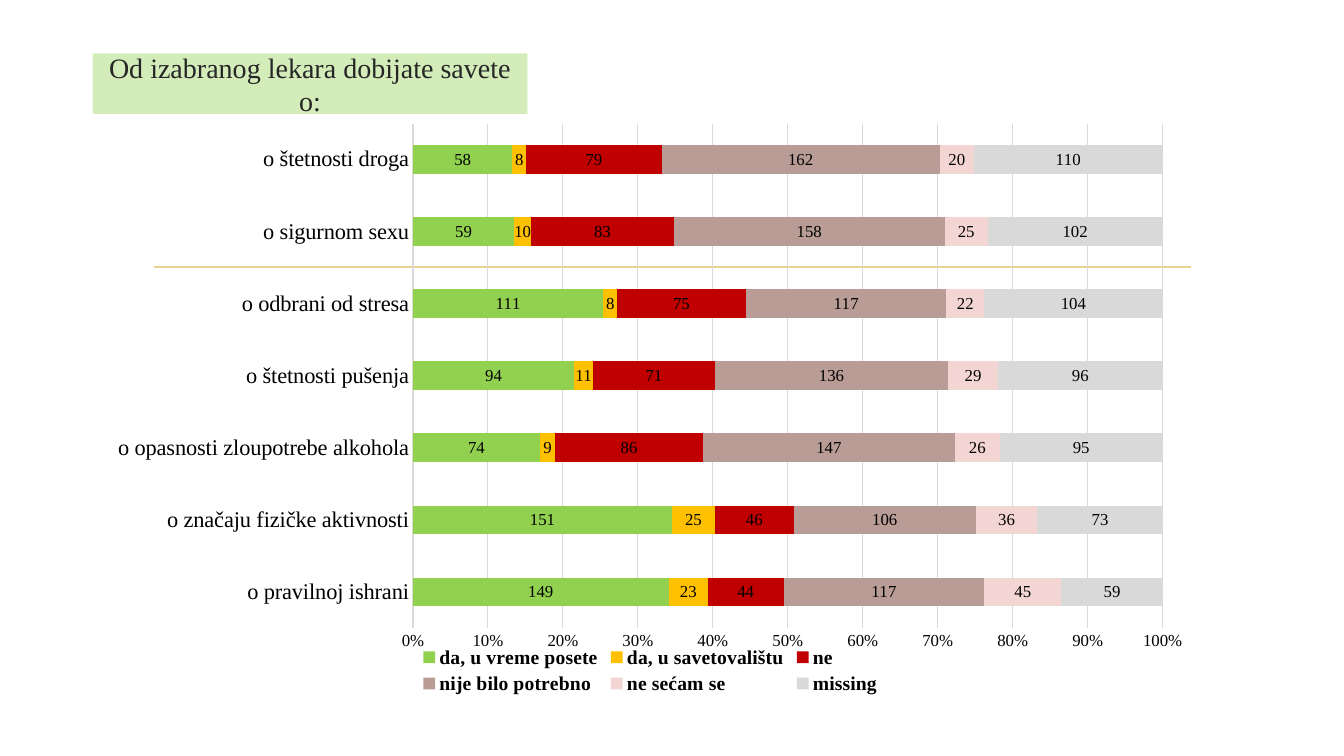
from lxml import etree
from pptx import Presentation
from pptx.chart.data import CategoryChartData
from pptx.dml.color import RGBColor
from pptx.enum.chart import (
    XL_CHART_TYPE, XL_LABEL_POSITION, XL_LEGEND_POSITION, XL_TICK_MARK)
from pptx.enum.shapes import MSO_CONNECTOR
from pptx.enum.text import MSO_ANCHOR, MSO_AUTO_SIZE, PP_ALIGN
from pptx.oxml.ns import qn
from pptx.util import Inches, Pt

STACKED = XL_CHART_TYPE.BAR_STACKED_100
CENTER = XL_LABEL_POSITION.CENTER
BOTTOM = XL_LEGEND_POSITION.BOTTOM
NO_TICK = XL_TICK_MARK.NONE
STRAIGHT = MSO_CONNECTOR.STRAIGHT
MIDDLE = MSO_ANCHOR.MIDDLE
NO_FIT = MSO_AUTO_SIZE.NONE
MID_TEXT = PP_ALIGN.CENTER

FACE = "Times New Roman"
COLORS = {
    "green": "92D050", "amber": "FFC000", "red": "C00000",
    "brown": "B89C95", "pink": "F3D5D3", "gray": "D9D9D9",
    "gold": "E8D191", "dark": "262626", "black": "000000",
}
TOPICS = [
    "o pravilnoj ishrani", "o značaju fizičke aktivnosti",
    "o opasnosti zloupotrebe alkohola", "o štetnosti pušenja",
    "o odbrani od stresa", "o sigurnom sexu", "o štetnosti droga",
]
ANSWERS = [
    ("da, u vreme posete", "green", (149, 151, 74, 94, 111, 59, 58)),
    ("da, u savetovalištu", "amber", (23, 25, 9, 11, 8, 10, 8)),
    ("ne", "red", (44, 46, 86, 71, 75, 83, 79)),
    ("nije bilo potrebno", "brown", (117, 106, 147, 136, 117, 158, 162)),
    ("ne sećam se", "pink", (45, 36, 26, 29, 22, 25, 20)),
    ("missing", "gray", (59, 73, 95, 96, 104, 102, 110)),
]
PLOT = {"x": 0.286, "y": 0.02, "w": 0.676, "h": 0.86}


def color(name):
    return RGBColor.from_string(COLORS[name])


def box(*sizes):
    return [Inches(size) for size in sizes]


def set_font(font, size, name="black", bold=False):
    font.name = FACE
    font.size = Pt(size)
    font.bold = bold
    font.color.rgb = color(name)


def set_line(line, name, width):
    line.color.rgb = color(name)
    line.width = Pt(width)


def add_rule(slide):
    rule = slide.shapes.add_connector(STRAIGHT, *box(1.53, 2.65, 11.81, 2.65))
    set_line(rule.line, "gold", 1.25)
    etree.SubElement(rule.element.spPr, qn("a:effectLst"))


def add_title(slide, text):
    title = slide.shapes.title
    title.left, title.top, title.width, title.height = box(
        0.92, 0.53, 4.31, 0.6)
    title.fill.solid()
    title.fill.fore_color.rgb = color("green")
    tint = next(title.element.spPr.iter(qn("a:srgbClr")))
    etree.SubElement(tint, qn("a:alpha"), val="40000")
    frame = title.text_frame
    frame.text = text
    frame.word_wrap = True
    frame.auto_size = NO_FIT
    frame.vertical_anchor = MIDDLE
    para = frame.paragraphs[0]
    para.alignment = MID_TEXT
    set_font(para.runs[0].font, 20, "dark")


def place_plot(chart):
    area = next(chart.element.iter(qn("c:plotArea")))
    for old in area.findall(qn("c:layout")):
        area.remove(old)
    layout = etree.Element(qn("c:layout"))
    area.insert(0, layout)
    manual = etree.SubElement(layout, qn("c:manualLayout"))
    rules = {"layoutTarget": "inner", "xMode": "edge", "yMode": "edge", **PLOT}
    for tag, value in rules.items():
        etree.SubElement(manual, qn("c:" + tag), val=str(value))


def style_axes(chart):
    topics, share = chart.category_axis, chart.value_axis
    for axis, size in ((topics, 16), (share, 12)):
        axis.major_tick_mark = axis.minor_tick_mark = NO_TICK
        set_font(axis.tick_labels.font, size)
    set_line(topics.format.line, "gray", 0.75)
    share.format.line.fill.background()
    share.has_major_gridlines = True
    set_line(share.major_gridlines.format.line, "gray", 0.75)
    share.minimum_scale, share.maximum_scale = 0, 1
    share.major_unit = 0.1
    share.tick_labels.number_format = "0%"
    share.tick_labels.number_format_is_linked = False


def style_bars(plot):
    plot.gap_width = 150
    plot.overlap = 100
    plot.vary_by_categories = False
    for series, (_, name, _) in zip(plot.series, ANSWERS):
        series.format.fill.solid()
        series.format.fill.fore_color.rgb = color(name)
        labels = series.data_labels
        labels.show_value = True
        labels.position = CENTER
        set_font(labels.font, 12)


def add_bars(slide):
    data = CategoryChartData()
    data.categories = TOPICS
    for name, _, values in ANSWERS:
        data.add_series(name, values)
    chart = slide.shapes.add_chart(
        STACKED, *box(0.95, 1.11, 11, 5.82), data).chart
    set_font(chart.font, 10)
    chart.has_title = False
    chart.has_legend = True
    chart.legend.position = BOTTOM
    chart.legend.include_in_layout = False
    set_font(chart.legend.font, 14, bold=True)
    style_axes(chart)
    style_bars(chart.plots[0])
    place_plot(chart)


def main():
    deck = Presentation()
    deck.slide_width, deck.slide_height = box(13.33, 7.5)
    slide = deck.slides.add_slide(deck.slide_layouts[5])
    add_rule(slide)
    add_title(slide, "Od izabranog lekara dobijate savete o:")
    add_bars(slide)
    deck.save("out.pptx")


if __name__ == "__main__":
    main()
